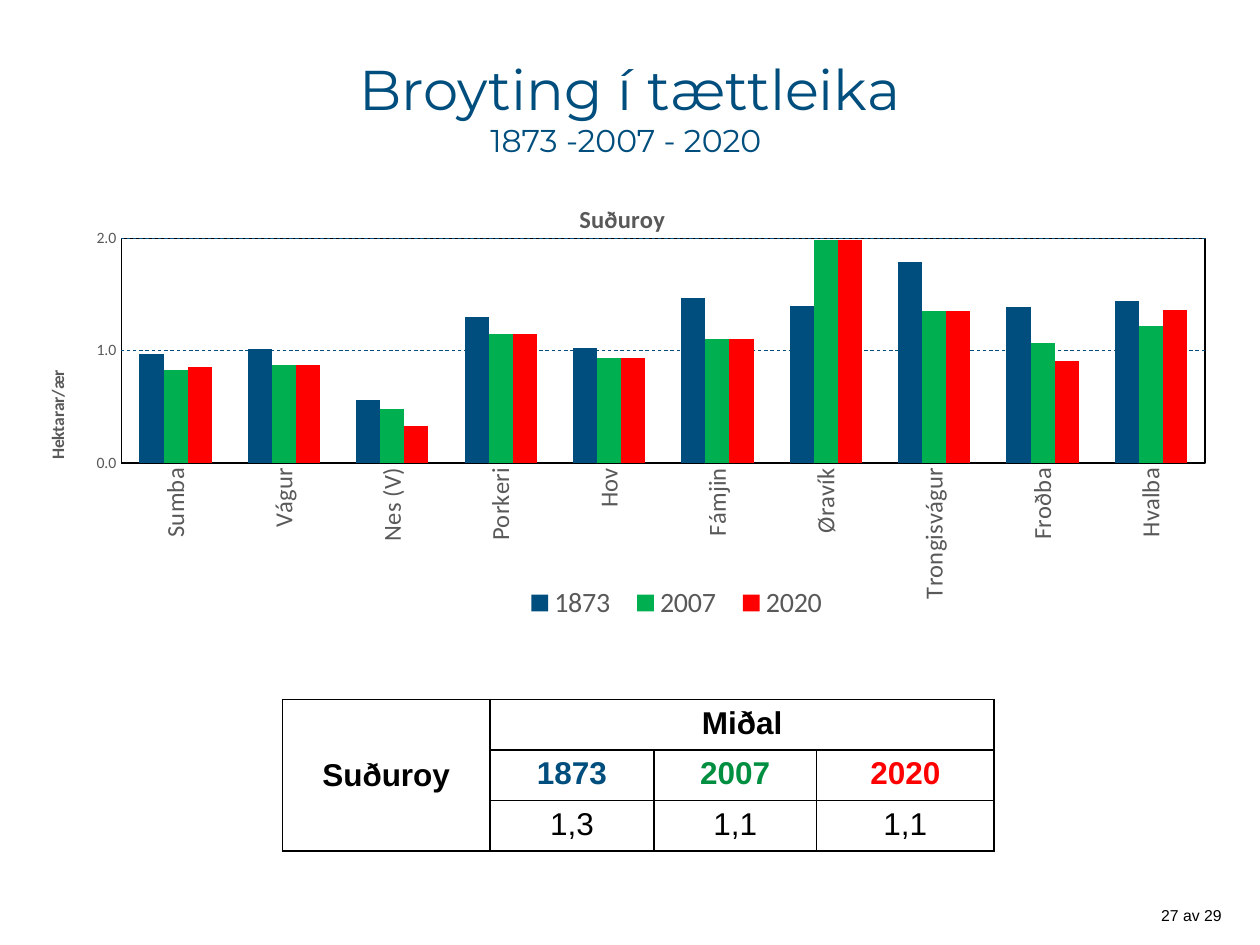
from dataclasses import dataclass

from lxml import etree
from pptx import Presentation
from pptx.chart.data import CategoryChartData
from pptx.dml.color import RGBColor
from pptx.enum.chart import XL_CHART_TYPE, XL_LEGEND_POSITION, XL_TICK_MARK
from pptx.enum.dml import MSO_LINE
from pptx.enum.text import MSO_ANCHOR, PP_ALIGN
from pptx.oxml import parse_xml
from pptx.oxml.ns import nsdecls, qn
from pptx.util import Cm, Pt

CLUSTER = XL_CHART_TYPE.COLUMN_CLUSTERED
BOTTOM = XL_LEGEND_POSITION.BOTTOM
NO_TICK = XL_TICK_MARK.NONE
DASH = MSO_LINE.DASH
CENTER, LEFT = PP_ALIGN.CENTER, PP_ALIGN.LEFT
MIDDLE = MSO_ANCHOR.MIDDLE

BLUE, GREEN, RED = "004E7D", "00B050", "FF0000"
BLACK, GRAY = "000000", "595959"


@dataclass
class Run:
    text: str
    size: float
    color: str = BLACK
    face: str = "Arial"
    bold: bool = False


@dataclass
class Series:
    year: str
    color: str
    values: list[float]


@dataclass
class Entry:
    row: int
    col: int
    text: str
    color: str = BLACK
    bold: bool = True


TOWNS = ["Sumba", "Vágur", "Nes (V)", "Porkeri", "Hov", "Fámjin",
         "Øravík", "Trongisvágur", "Froðba", "Hvalba"]
SERIES = [
    Series("1873", BLUE, [0.97, 1.01, 0.56, 1.3, 1.02, 1.47, 1.4, 1.79, 1.39, 1.44]),
    Series("2007", GREEN, [0.83, 0.87, 0.48, 1.15, 0.93, 1.1, 1.98, 1.35, 1.07, 1.22]),
    Series("2020", RED, [0.85, 0.87, 0.33, 1.15, 0.93, 1.1, 1.98, 1.35, 0.91, 1.36]),
]
ENTRIES = [
    Entry(0, 0, "Suðuroy"), Entry(0, 1, "Miðal"),
    Entry(1, 1, "1873", BLUE), Entry(1, 2, "2007", "008E40"), Entry(1, 3, "2020", RED),
    Entry(2, 1, "1,3", bold=False), Entry(2, 2, "1,1", bold=False),
    Entry(2, 3, "1,1", bold=False),
]
WIDTHS = [4.19, 3.3, 3.28, 3.58]
HEIGHT = 0.99


def rgb(color: str) -> RGBColor:
    return RGBColor.from_string(color)


def style(font, size: float, color: str, face: str, bold: bool = False) -> None:
    font.size, font.name, font.bold = Pt(size), face, bold
    font.color.rgb = rgb(color)


def add_run(para, run: Run) -> None:
    piece = para.add_run()
    piece.text = run.text
    style(piece.font, run.size, run.color, run.face, run.bold)


def add_text(slide, box: tuple, lines: list[Run], align, wrap: bool) -> None:
    frame = slide.shapes.add_textbox(*map(Cm, box)).text_frame
    frame.word_wrap = wrap
    para = frame.paragraphs[0]
    para.alignment = align
    for i, line in enumerate(lines):
        if i:
            para.add_line_break()
        add_run(para, line)


def place(node, index: int, **spots: float) -> None:
    """Give a chart element a manual layout, as fractions of the chart."""
    for old in node.findall(qn("c:layout")):
        node.remove(old)
    target = '<c:layoutTarget val="inner"/>' if index == 0 else ""
    modes = "".join(f'<c:{k}Mode val="edge"/>' for k in spots if k in "xy")
    sizes = "".join(f'<c:{k} val="{v}"/>' for k, v in spots.items())
    node.insert(index, parse_xml(
        f'<c:layout {nsdecls("c")}><c:manualLayout>{target}{modes}{sizes}'
        "</c:manualLayout></c:layout>"))


def add_frame(plot) -> None:
    """Outline the plot area."""
    plot.append(parse_xml(
        f'<c:spPr {nsdecls("c", "a")}><a:noFill/><a:ln w="9525"><a:solidFill>'
        f'<a:srgbClr val="{BLACK}"/></a:solidFill></a:ln></c:spPr>'))


def add_bars(slide) -> None:
    data = CategoryChartData(number_format="0.00")
    data.categories = TOWNS
    for item in SERIES:
        data.add_series(item.year, item.values)
    box = map(Cm, (0.38, 3.66, 24.33, 9.14))
    chart = slide.shapes.add_chart(CLUSTER, *box, data).chart
    style(chart.font, 10, BLACK, "Calibri")

    chart.has_title = True
    add_run(chart.chart_title.text_frame.paragraphs[0],
            Run("Suðuroy", 14, GRAY, "Calibri", True))

    bars = chart.plots[0]
    bars.gap_width, bars.overlap, bars.vary_by_categories = 150, 0, False
    for bar, item in zip(bars.series, SERIES):
        bar.format.fill.solid()
        bar.format.fill.fore_color.rgb = rgb(item.color)

    towns = chart.category_axis
    towns.major_tick_mark = towns.minor_tick_mark = NO_TICK
    style(towns.tick_labels.font, 14, GRAY, "Calibri")
    towns.format.line.color.rgb = rgb(BLACK)
    towns.format.line.width = Pt(0.75)

    scale = chart.value_axis
    scale.minimum_scale, scale.maximum_scale, scale.major_unit = 0, 2, 1
    scale.major_tick_mark = scale.minor_tick_mark = NO_TICK
    style(scale.tick_labels.font, 9, GRAY, "Calibri")
    scale.tick_labels.number_format = "0.0"
    scale.tick_labels.number_format_is_linked = False
    scale.format.line.fill.background()
    grid = scale.major_gridlines.format.line
    grid.color.rgb, grid.width, grid.dash_style = rgb(BLUE), Pt(0.5), DASH
    scale.has_title = True
    add_run(scale.axis_title.text_frame.paragraphs[0],
            Run("Hektarar/ær", 10, GRAY, "Calibri", True))

    chart.has_legend = True
    chart.legend.position = BOTTOM
    chart.legend.include_in_layout = False
    style(chart.legend.font, 16, GRAY, "Calibri")

    root = chart._chartSpace
    plot = root.find(".//" + qn("c:plotArea"))
    label = plot.find(f"{qn('c:valAx')}/{qn('c:title')}")
    turned = (label, plot.find(f"{qn('c:catAx')}/{qn('c:txPr')}"))
    for node in turned:
        body = node.find(".//" + qn("a:bodyPr"))
        body.set("rot", "-5400000")
        body.set("vert", "horz")
    place(plot, 0, x=0.085, y=0.125, w=0.898, h=0.496)
    place(label, 1, x=0.02, y=0.41)
    place(root.find(".//" + qn("c:legend")), 1, x=0.41, y=0.88, w=0.27, h=0.1)
    add_frame(plot)


def add_border(cell) -> None:
    props = cell._tc.get_or_add_tcPr()
    for i, side in enumerate(("lnL", "lnR", "lnT", "lnB")):
        line = etree.Element(qn("a:" + side), w="12700")
        fill = etree.SubElement(line, qn("a:solidFill"))
        etree.SubElement(fill, qn("a:srgbClr"), val=BLACK)
        props.insert(i, line)


def add_means(slide) -> None:
    box = map(Cm, (5.69, 14.1, sum(WIDTHS), 3 * HEIGHT))
    table = slide.shapes.add_table(3, len(WIDTHS), *box).table
    table.first_row = table.horz_banding = False
    for col, width in zip(table.columns, WIDTHS):
        col.width = Cm(width)
    for row in table.rows:
        row.height = Cm(HEIGHT)
    for cell in table.iter_cells():
        cell.fill.background()
        add_border(cell)
        cell.text_frame.paragraphs[0].font.size = Pt(18)
    table.cell(0, 0).merge(table.cell(2, 0))
    table.cell(0, 1).merge(table.cell(0, 3))
    table.cell(0, 0).vertical_anchor = MIDDLE
    for item in ENTRIES:
        para = table.cell(item.row, item.col).text_frame.paragraphs[0]
        para.alignment = CENTER
        add_run(para, Run(item.text, 18, item.color, bold=item.bold))


def main() -> None:
    deck = Presentation()
    deck.slide_width, deck.slide_height = Cm(25.4), Cm(19.05)
    slide = deck.slides.add_slide(deck.slide_layouts[6])
    add_text(slide, (1.27, 0.97, 22.86, 1.7),
             [Run("Broyting í tættleika", 32, BLUE, "Montserrat"),
              Run("1873 -2007 - 2020 ", 18, BLUE, "Montserrat")], CENTER, True)
    add_bars(slide)
    add_means(slide)
    add_text(slide, (23.16, 18.14, 1.9, 0.64), [Run("27 av 29", 9)], LEFT, False)
    deck.save("out.pptx")


if __name__ == "__main__":
    main()
